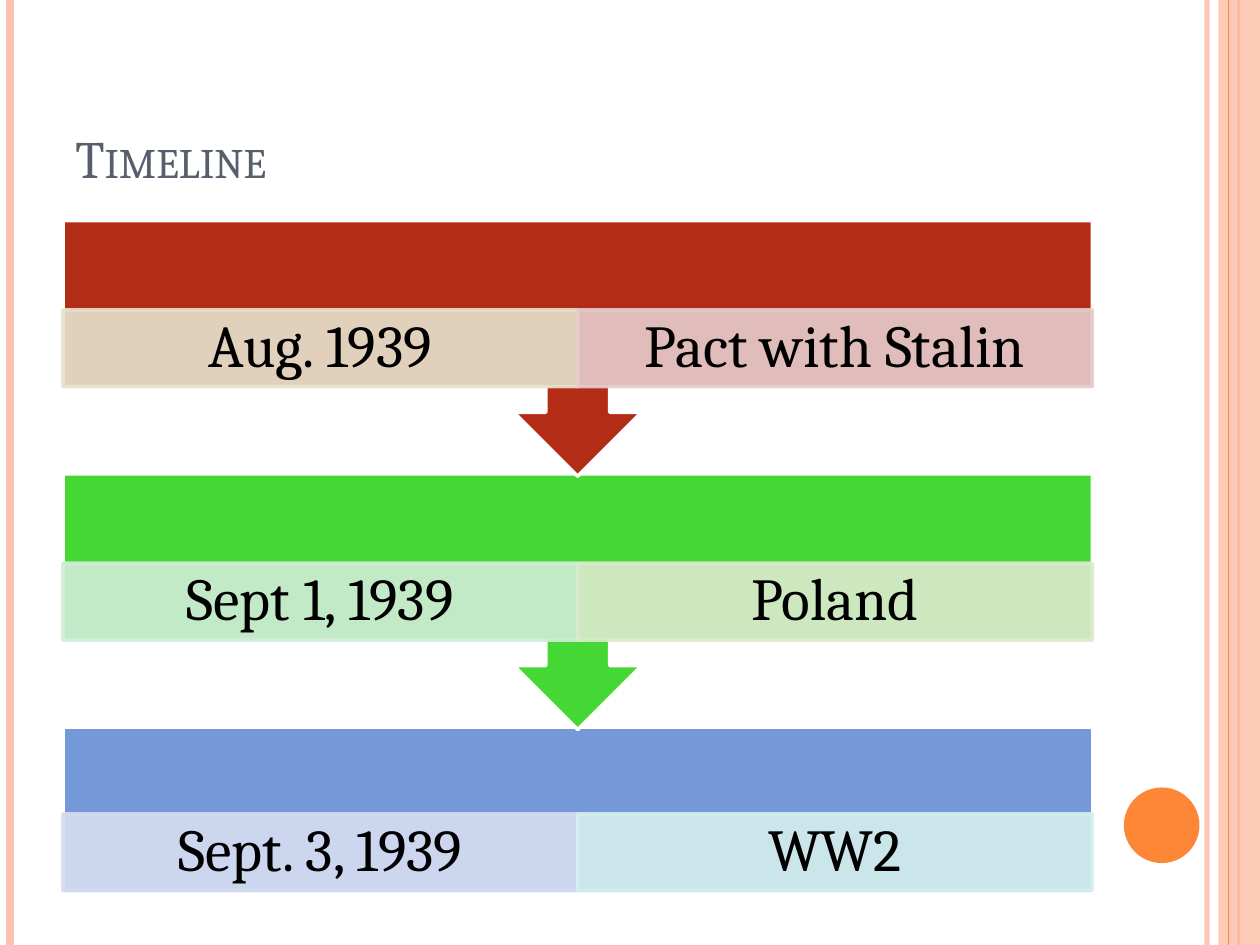
from lxml.etree import SubElement as Sub
from pptx import Presentation
from pptx.dml.color import RGBColor as Rgb
from pptx.enum.shapes import MSO_CONNECTOR as Conn, MSO_SHAPE as Kind
from pptx.enum.text import MSO_ANCHOR as Anchor, PP_ALIGN as Align
from pptx.oxml.ns import qn
from pptx.util import Inches as In, Pt

WIDE, HIGH = 10, 7.5
LEFT, SPAN = 0.5, 8.17        # timeline column
TOP, STEP = 1.75, 2.01        # first row and row pitch
BOX, FULL = 1.32, 2.03        # row height without and with its arrow
CELL = 0.61
HALF = SPAN / 2

HUES = {
    "peach": "FEC3AE", "orange": "FE8637", "slate": "575F6D",
    "black": "000000", "white": "FFFFFF",
    "red": "B32C16", "green": "45D834", "blue": "7598D9",
    "sand": "E7E2CE", "rose": "E5CDCC", "mint": "D1ECD8",
    "lime": "DCEACF", "lilac": "D6DDF1", "aqua": "D4EFEE",
}

# Row colour, cells (text, colour), cell offset from the row top
ROWS = [
    ("red", [("Aug. 1939", "sand"), ("Pact with Stalin", "rose")], 0.71),
    ("green", [("Sept 1, 1939", "mint"), ("Poland", "lime")], 0.71),
    ("blue", [("Sept. 3, 1939", "lilac"), ("WW2", "aqua")], 0.69),
]


def paint(fmt, hue, alpha=100):
    """Give a fill a solid colour, translucent if alpha is below 100."""
    fmt.solid()
    fmt.fore_color.rgb = Rgb.from_string(HUES[hue])
    if alpha < 100:
        node = next(fmt.fore_color._xFill.iter(qn("a:srgbClr")))
        Sub(node, qn("a:alpha"), val=str(alpha * 1000))


def block(slide, kind, x, y, w, h, hue, edge=None, alpha=100):
    shape = slide.shapes.add_shape(kind, In(x), In(y), In(w), In(h))
    shape.shadow.inherit = False
    paint(shape.fill, hue, alpha)
    if edge:
        shape.line.width = Pt(2)
        paint(shape.line.fill, edge, alpha)
    else:
        shape.line.fill.background()
    return shape


def rule(slide, x, hue, width, alpha=100):
    """Draw a line down the whole slide."""
    line = slide.shapes.add_connector(Conn.STRAIGHT, In(x), 0, In(x), In(HIGH))
    line.line.width = Pt(width)
    paint(line.line.fill, hue, alpha)
    Sub(line._element.spPr, qn("a:effectLst"))


def write(shape, text, size=34, hue="black", align=Align.CENTER,
          anchor=Anchor.MIDDLE, pad=0.26, space=0.9, small=False):
    frame = shape.text_frame
    frame.word_wrap = True
    frame.vertical_anchor = anchor
    frame.margin_left = frame.margin_right = In(pad)
    frame.margin_top = frame.margin_bottom = In(0.05)
    para = frame.paragraphs[0]
    para.alignment, para.line_spacing = align, space
    run = para.add_run()
    run.text = text
    run.font.name, run.font.size = "Cambria", Pt(size)
    run.font.color.rgb = Rgb.from_string(HUES[hue])
    if small:
        run.font._element.set("cap", "small")


def frame(slide):
    """Draw the side rules, the band and the dot."""
    rule(slide, 9.58, "peach", 3, 93)
    rule(slide, 0.08, "peach", 4.5)
    rule(slide, 9.83, "orange", 1.5)
    block(slide, Kind.RECTANGLE, 9.67, 0, WIDE - 9.67, HIGH, "peach", alpha=87)
    rule(slide, 9.75, "orange", 0.75)
    block(slide, Kind.OVAL, 8.92, 6.25, 0.6, 0.6, "orange")


def row(slide, num, hue, cells, drop):
    y = TOP + num * STEP
    last = num == len(ROWS) - 1
    kind = Kind.RECTANGLE if last else Kind.UP_ARROW_CALLOUT
    bar = block(slide, kind, LEFT, y, SPAN, BOX if last else FULL, hue, "white")
    bar.rotation = 0 if last else 180
    for col, (text, tint) in enumerate(cells):
        cell = block(slide, Kind.RECTANGLE, LEFT + col * HALF, y + drop,
                     HALF, CELL, tint, tint, 90)
        write(cell, text)


def main():
    deck = Presentation()
    deck.slide_width, deck.slide_height = In(WIDE), In(HIGH)
    slide = deck.slides.add_slide(deck.slide_layouts[6])
    frame(slide)

    # Title
    head = slide.shapes.add_textbox(In(LEFT), In(0.3), In(SPAN), In(1.25))
    write(head, "Timeline", size=30, hue="slate", align=Align.LEFT,
          anchor=Anchor.BOTTOM, pad=0.1, space=1.0, small=True)

    # Timeline, the lowest row at the back
    for num in reversed(range(len(ROWS))):
        row(slide, num, *ROWS[num])
    deck.save("out.pptx")


if __name__ == "__main__":
    main()
